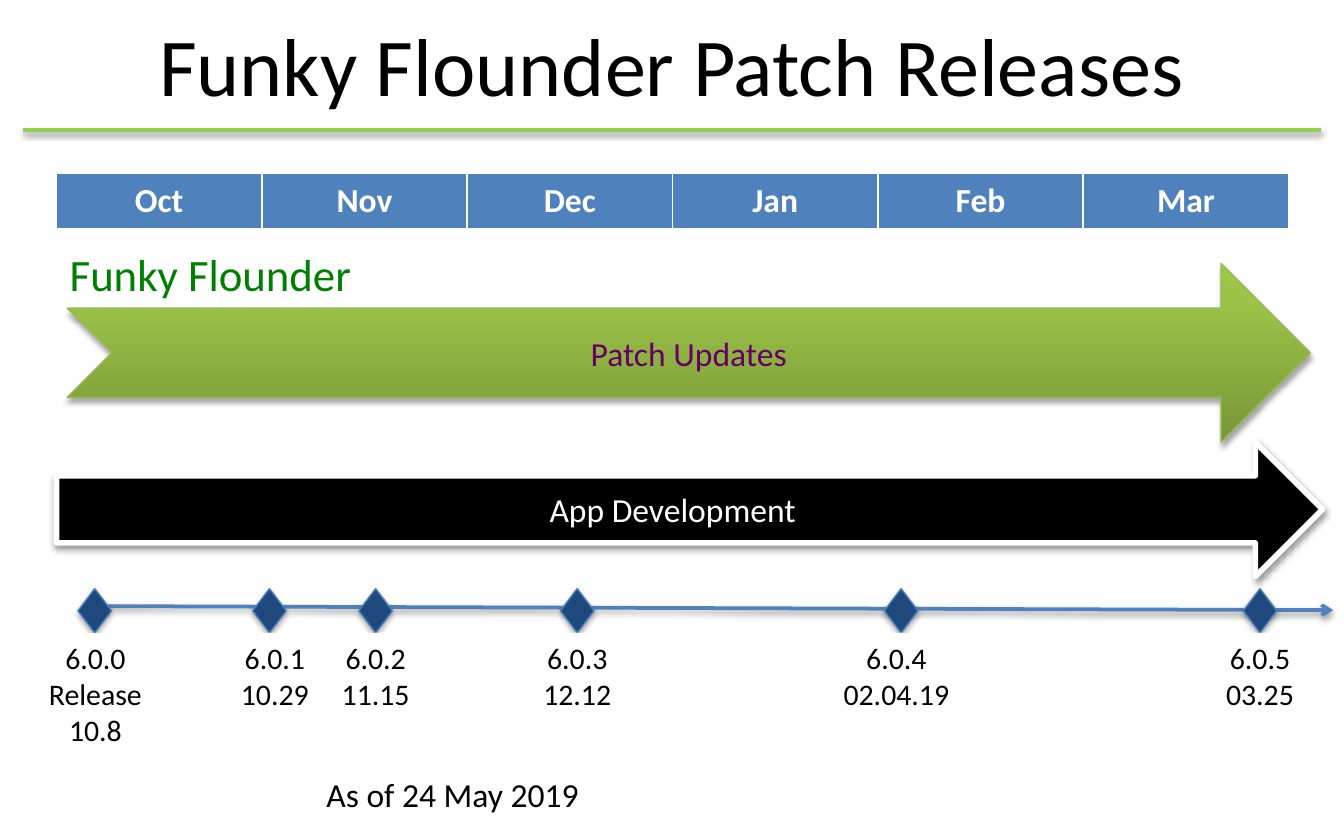
from dataclasses import dataclass
from copy import deepcopy

from pptx import Presentation
from pptx.dml.color import RGBColor
from pptx.enum.shapes import MSO_CONNECTOR, MSO_SHAPE
from pptx.enum.text import MSO_ANCHOR, PP_ALIGN
from pptx.oxml.ns import qn
from pptx.oxml.xmlchemy import OxmlElement
from pptx.util import Inches, Pt

FONT = "Calibri"
COLORS = {
    "black": "000000", "white": "FFFFFF", "lime": "92D050", "blue": "4F81BD",
    "navy": "1F497D", "edge": "4B7EBC", "green": "008000", "plum": "660066",
    "rim": "98B955",
}
BLEND = [(0, "779737"), (0.8, "9BC348"), (1, "9DC746")]
MONTHS = ["Oct", "Nov", "Dec", "Jan", "Feb", "Mar"]


@dataclass
class Patch:
    mark: float
    left: float
    width: float
    lines: list[str]
    height: float = 0.64
    edge: str = "edge"


PATCHES = [
    Patch(0.58, 0.25, 0.92, ["6.0.0 Release 10.8"], 0.91),
    Patch(1.88, 1.67, 0.75, ["6.0.1", "10.29"]),
    Patch(2.67, 2.42, 0.75, ["6.0.2", "11.15"]),
    Patch(4.17, 3.92, 0.75, ["6.0.3", "12.12"]),
    Patch(6.58, 6.17, 1, ["6.0.4", "02.04.19"]),
    Patch(9.25, 9, 0.75, ["6.0.5", "03.25"], edge="blue"),
]


def tint(name: str) -> RGBColor:
    return RGBColor.from_string(COLORS[name])


def write(frame, lines: list[str], size: float, color: str,
          align=PP_ALIGN.CENTER, bold: bool = False) -> None:
    for i, line in enumerate(lines):
        para = frame.add_paragraph() if i else frame.paragraphs[0]
        para.alignment = align
        run = para.add_run()
        run.text = line
        run.font.name = FONT
        run.font.size = Pt(size)
        run.font.bold = bold
        run.font.color.rgb = tint(color)


def shade(shape, alpha: int, drop: float) -> None:
    props = shape._element.spPr
    effects = props.find(qn("a:effectLst"))
    if effects is None:
        effects = OxmlElement("a:effectLst")
        props.append(effects)
    outer = OxmlElement("a:outerShdw")
    for key, value in (("blurRad", Pt(3.1)), ("dist", Pt(drop)),
                       ("dir", 5400000), ("rotWithShape", 0)):
        outer.set(key, str(int(value)))
    color = OxmlElement("a:srgbClr")
    color.set("val", COLORS["black"])
    clear = OxmlElement("a:alpha")
    clear.set("val", str(alpha * 1000))
    color.append(clear)
    outer.append(color)
    effects.append(outer)


def draw_line(slide, start: tuple, end: tuple, color: str, arrow: bool = False) -> None:
    line = slide.shapes.add_connector(
        MSO_CONNECTOR.STRAIGHT, *map(Inches, start + end))
    line.line.color.rgb = tint(color)
    line.line.width = Pt(2)
    if arrow:
        tail = OxmlElement("a:tailEnd")
        tail.set("type", "arrow")
        line.line._get_or_add_ln().append(tail)
    shade(line, 38, 1.6)


def draw_shape(slide, kind, place: tuple, fill: str, edge: str = "", width: float = 0.75):
    shape = slide.shapes.add_shape(kind, *map(Inches, place))
    shape.shadow.inherit = False
    shape.fill.solid()
    shape.fill.fore_color.rgb = tint(fill)
    if edge:
        shape.line.color.rgb = tint(edge)
        shape.line.width = Pt(width)
    else:
        shape.line.fill.background()
    return shape


def blend(shape) -> None:
    shape.fill.gradient()
    shape.fill.gradient_angle = 90
    stops = shape._element.spPr.find(qn("a:gradFill")).find(qn("a:gsLst"))
    stops.append(deepcopy(stops[-1]))
    for stop, (place, color) in zip(shape.fill.gradient_stops, BLEND):
        stop.position = place
        stop.color.rgb = RGBColor.from_string(color)


def draw_text(slide, place: tuple, text: str, size: float, color: str) -> None:
    frame = slide.shapes.add_textbox(*map(Inches, place)).text_frame
    frame.word_wrap = True
    write(frame, [text], size, color, PP_ALIGN.LEFT)


def draw_months(slide) -> None:
    table = slide.shapes.add_table(
        1, len(MONTHS), *map(Inches, (0.42, 1.29, 9.17, 0.41))).table
    for cell, month in zip(table.rows[0].cells, MONTHS):
        cell.fill.solid()
        cell.fill.fore_color.rgb = tint("blue")
        write(cell.text_frame, [month], 18, "white", bold=True)


def draw_patch(slide, patch: Patch) -> None:
    mark = draw_shape(slide, MSO_SHAPE.DIAMOND, (patch.mark, 4.38, 0.25, 0.33),
                      "navy", patch.edge)
    shade(mark, 35, 1.8)
    label = draw_shape(slide, MSO_SHAPE.RECTANGLE,
                       (patch.left, 4.71, patch.width, patch.height), "white")
    label.text_frame.word_wrap = True
    label.text_frame.vertical_anchor = MSO_ANCHOR.TOP
    write(label.text_frame, patch.lines, 16, "black")


def main() -> None:
    deck = Presentation()
    deck.slide_width, deck.slide_height = Inches(10), Inches(6.25)
    slide = deck.slides.add_slide(deck.slide_layouts[5])

    title = slide.shapes.title
    title.left, title.top, title.width, title.height = map(Inches, (0.5, 0.12, 9, 0.71))
    title.text_frame.vertical_anchor = MSO_ANCHOR.MIDDLE
    write(title.text_frame, ["Funky Flounder Patch Releases"], 44, "black")
    draw_line(slide, (0.17, 0.97), (9.83, 0.97), "lime")

    draw_months(slide)
    draw_line(slide, (0.71, 4.51), (9.92, 4.54), "blue", arrow=True)
    draw_text(slide, (0.42, 1.79, 3.75, 0.5), "Funky Flounder", 24, "green")

    update = draw_shape(slide, MSO_SHAPE.NOTCHED_RIGHT_ARROW,
                        (0.5, 1.96, 9.25, 1.33), "lime", "rim")
    blend(update)
    shade(update, 35, 1.8)
    write(update.text_frame, ["Patch Updates"], 18, "plum")

    build = draw_shape(slide, MSO_SHAPE.RIGHT_ARROW,
                       (0.42, 3.29, 9.42, 1), "black", "white", 3)
    shade(build, 38, 1.6)
    write(build.text_frame, ["App Development"], 18, "white")

    for patch in PATCHES:
        draw_patch(slide, patch)
    draw_text(slide, (2.33, 5.71, 2.58, 0.4), "As of 24 May 2019", 18, "black")
    deck.save("out.pptx")


if __name__ == "__main__":
    main()
